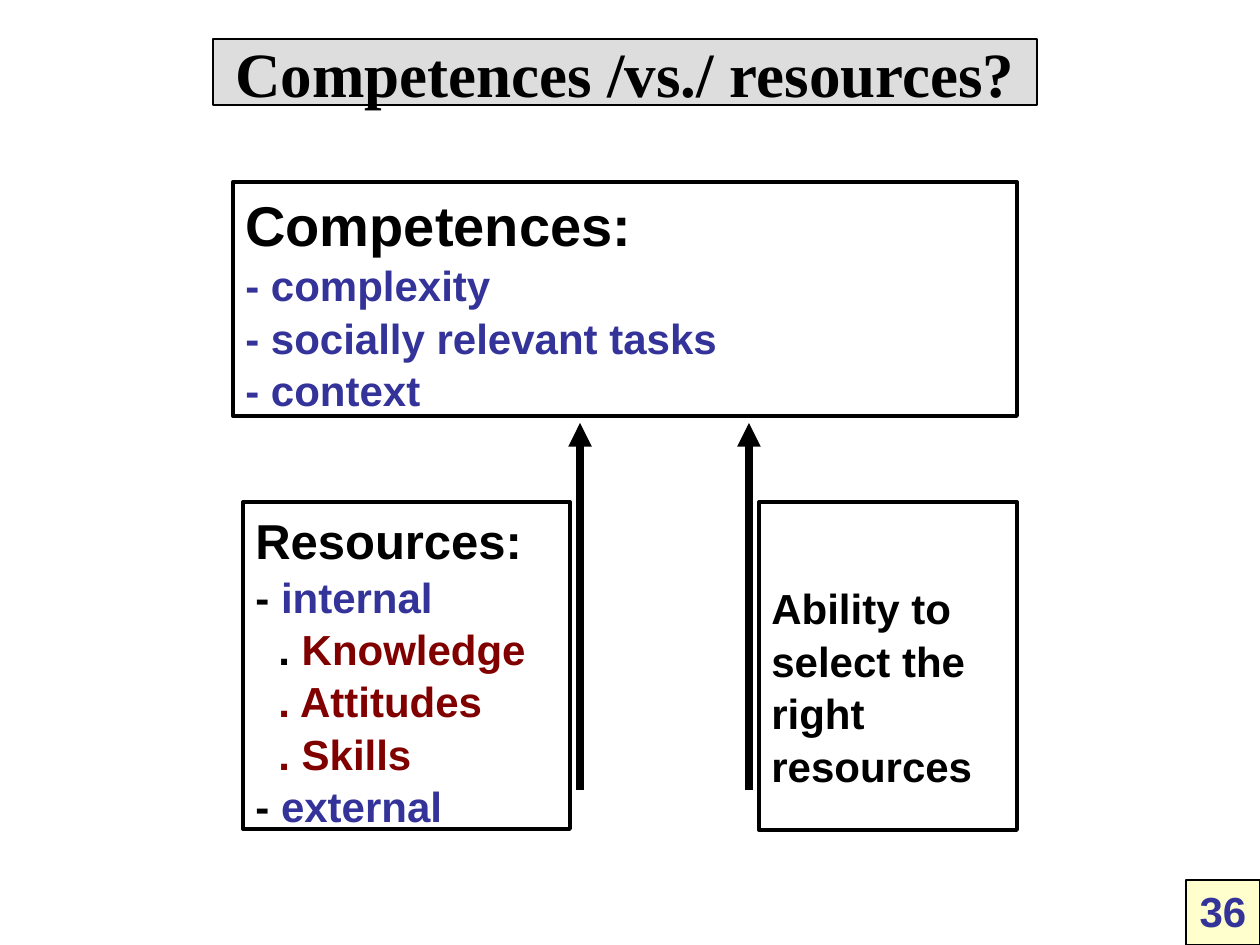
from lxml import etree
from pptx import Presentation
from pptx.dml.color import RGBColor
from pptx.enum.shapes import MSO_CONNECTOR, MSO_SHAPE
from pptx.enum.text import MSO_ANCHOR, PP_ALIGN
from pptx.oxml.ns import qn
from pptx.util import Emu, Pt

RECTANGLE = MSO_SHAPE.RECTANGLE
STRAIGHT = MSO_CONNECTOR.STRAIGHT
TOP, MIDDLE = MSO_ANCHOR.TOP, MSO_ANCHOR.MIDDLE
LEFT, CENTER = PP_ALIGN.LEFT, PP_ALIGN.CENTER

BLACK = RGBColor(0x00, 0x00, 0x00)
WHITE = RGBColor(0xFF, 0xFF, 0xFF)
GRAY = RGBColor(0xDD, 0xDD, 0xDD)
BLUE = RGBColor(0x33, 0x33, 0x99)
MAROON = RGBColor(0x80, 0x00, 0x00)
CREAM = RGBColor(0xFE, 0xFF, 0xCC)


def px(value):
    return Emu(round(value * 914400 / 126))


def add_box(box, lines, fill=WHITE, border=2.25, font="Arial", align=LEFT,
            anchor=TOP, top_inset=6, spacing=1.04):
    shape = slide.shapes.add_shape(RECTANGLE, *map(px, box))
    shape.shadow.inherit = False
    shape.fill.solid()
    shape.fill.fore_color.rgb = fill
    shape.line.color.rgb = BLACK
    shape.line.width = Pt(border)
    frame = shape.text_frame
    frame.word_wrap = True
    frame.vertical_anchor = anchor
    frame.margin_top = px(top_inset)
    for index, (size, indent, runs) in enumerate(lines):
        paragraph = frame.add_paragraph() if index else frame.paragraphs[0]
        paragraph.alignment = align
        paragraph.line_spacing = spacing
        if indent:
            paragraph._p.get_or_add_pPr().set("marL", str(px(indent)))
        for text, color in runs:
            run = paragraph.add_run()
            run.text = text
            run.font.name = font
            run.font.size = Pt(size)
            run.font.bold = True
            run.font.color.rgb = color


presentation = Presentation()
presentation.slide_width = px(1260)
presentation.slide_height = px(945)
slide = presentation.slides.add_slide(presentation.slide_layouts[6])

add_box((213, 39, 824, 66), [(36, 0, [("Competences /vs./ resources?", BLACK)])],
        fill=GRAY, border=1.5, font="Times New Roman", align=CENTER,
        anchor=MIDDLE, spacing=1.0)

competences = ["- complexity", "- socially relevant tasks", "- context"]
add_box((233, 182, 784, 234),
        [(32, 0, [("Competences:", BLACK)])]
        + [(24, 0, [(text, BLUE)]) for text in competences])

add_box((243, 502, 327, 327), [
    (28, 0, [("Resources:", BLACK)]),
    (24, 0, [("- ", BLACK), ("internal", BLUE)]),
    (24, 23, [(". ", BLACK), ("Knowledge", MAROON)]),
    (24, 23, [(". Attitudes", MAROON)]),
    (24, 23, [(". Skills", MAROON)]),
    (24, 0, [("- ", BLACK), ("external", BLUE)]),
])

add_box((759, 502, 258, 328),
        [(24, 0, [("Ability to select the right resources", BLACK)])],
        top_inset=79)

add_box((1186, 880, 74, 65), [(24, 0, [("36", BLUE)])],
        fill=CREAM, border=1, align=CENTER, spacing=1.0)

for x in (580, 749):
    arrow = slide.shapes.add_connector(STRAIGHT, px(x), px(790), px(x), px(423))
    arrow.line.color.rgb = BLACK
    arrow.line.width = Pt(4.5)
    etree.SubElement(arrow.line._get_or_add_ln(), qn("a:tailEnd"), type="triangle")
    etree.SubElement(arrow._element.spPr, qn("a:effectLst"))

presentation.save("out.pptx")
